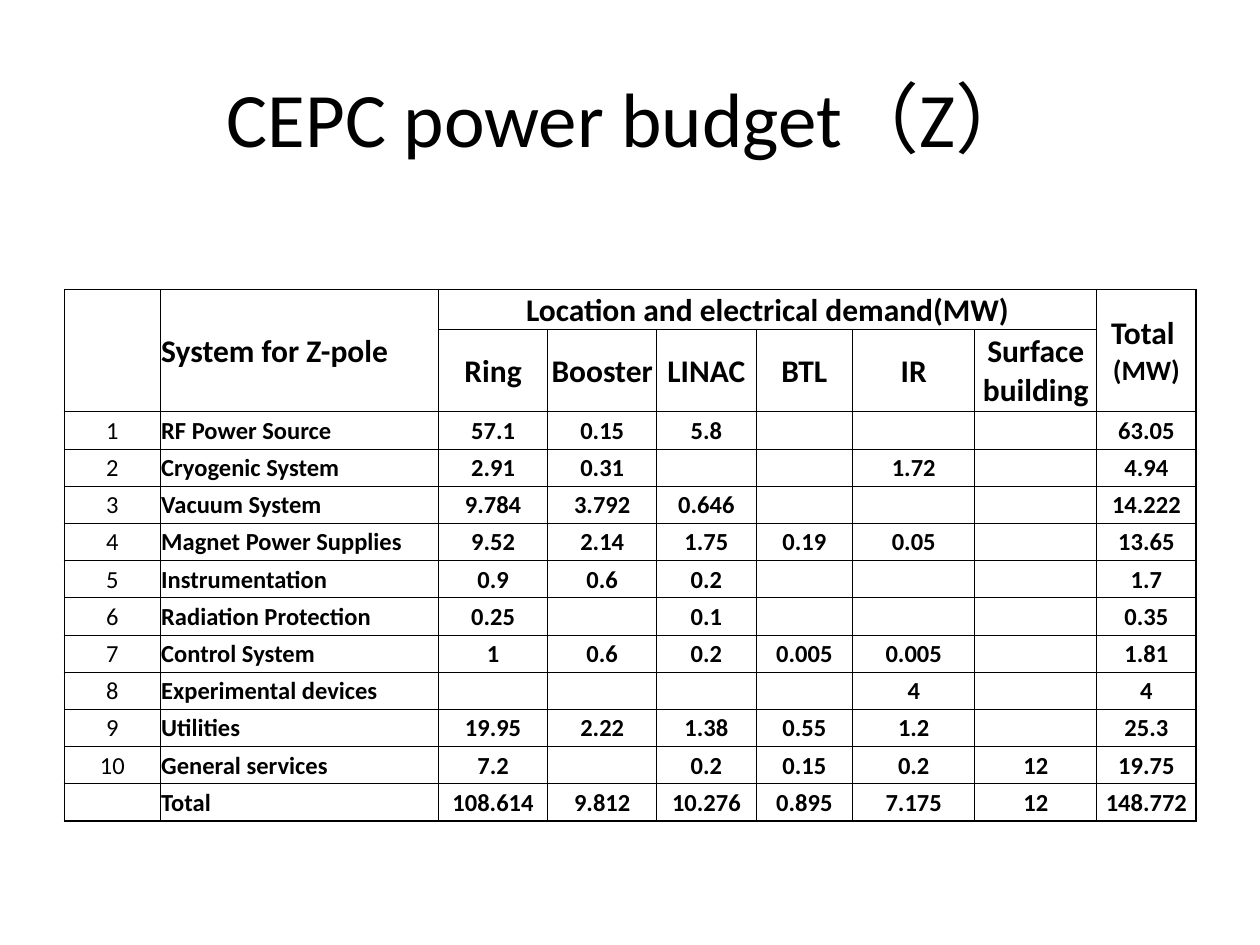
from lxml.etree import SubElement
from pptx import Presentation
from pptx.dml.color import RGBColor
from pptx.enum.text import MSO_ANCHOR, PP_ALIGN
from pptx.oxml.ns import qn
from pptx.util import Cm, Pt

COLORS = {"ink": "000000", "paper": "FFFFFF"}
FONT = "Calibri"

TITLE = "CEPC power budget（Z）"
HEADERS = [
    ["", "System for Z-pole", "Location and electrical demand(MW)", "", "", "", "", "",
     [("Total  ", 18), ("(MW)", 16)]],
    ["", "", "Ring", "Booster", "LINAC", "BTL", "IR", "Surface building", ""],
]
SYSTEMS = [
    ["1", "RF Power Source", "57.1", "0.15", "5.8", "", "", "", "63.05"],
    ["2", "Cryogenic System", "2.91", "0.31", "", "", "1.72", "", "4.94"],
    ["3", "Vacuum System", "9.784", "3.792", "0.646", "", "", "", "14.222"],
    ["4", "Magnet Power Supplies", "9.52", "2.14", "1.75", "0.19", "0.05", "", "13.65"],
    ["5", "Instrumentation", "0.9", "0.6", "0.2", "", "", "", "1.7"],
    ["6", "Radiation Protection", "0.25", "", "0.1", "", "", "", "0.35"],
    ["7", "Control System", "1", "0.6", "0.2", "0.005", "0.005", "", "1.81"],
    ["8", "Experimental devices", "", "", "", "", "4", "", "4"],
    ["9", "Utilities", "19.95", "2.22", "1.38", "0.55", "1.2", "", "25.3"],
    ["10", "General services", "7.2", "", "0.2", "0.15", "0.2", "12", "19.75"],
    ["", "Total", "108.614", "9.812", "10.276", "0.895", "7.175", "12", "148.772"],
]
ROWS = HEADERS + SYSTEMS
COLUMN_WIDTHS = [1.93, 5.61, 2.2, 2.2, 2, 1.95, 2.46, 2.46, 2]
ROW_HEIGHTS = [0.81, 1.65] + [0.75] * len(SYSTEMS)
MERGES = [((0, 0), (1, 0)), ((0, 1), (1, 1)), ((0, 2), (0, 7)), ((0, 8), (1, 8))]
NUMBER_COLUMN, NAME_COLUMN = 0, 1


def write_text(text_frame, text, *, size, bold=False, align=PP_ALIGN.CENTER):
    """Write a string, or a list of (string, size) runs, as one paragraph."""
    paragraph = text_frame.paragraphs[0]
    paragraph.alignment = align
    if not text:
        # An empty cell takes its line height from the end-of-paragraph size.
        SubElement(paragraph._p, qn("a:endParaRPr"), sz=str(size * 100))
        return
    runs = [(text, size)] if isinstance(text, str) else text
    for run_text, run_size in runs:
        run = paragraph.add_run()
        run.text = run_text
        run.font.name = FONT
        run.font.size = Pt(run_size)
        run.font.bold = bold
        run.font.color.rgb = RGBColor.from_string(COLORS["ink"])


def draw_borders(cell, widths):
    properties = cell._tc.get_or_add_tcPr()
    for side, width in widths.items():
        line = SubElement(properties, qn(f"a:ln{side}"), w=str(Pt(width)))
        fill = SubElement(line, qn("a:solidFill"))
        SubElement(fill, qn("a:srgbClr"), val=COLORS["ink"])


def add_budget_table(slide):
    frame = slide.shapes.add_table(len(ROWS), len(COLUMN_WIDTHS), Cm(1.3), Cm(5.84),
                                   Cm(sum(COLUMN_WIDTHS)), Cm(sum(ROW_HEIGHTS)))
    table = frame.table
    table.first_row = table.horz_banding = False
    for column, width in zip(table.columns, COLUMN_WIDTHS):
        column.width = Cm(width)
    for row, height in zip(table.rows, ROW_HEIGHTS):
        row.height = Cm(height)
    for start, end in MERGES:
        table.cell(*start).merge(table.cell(*end))

    last_row, last_column = len(ROWS) - 1, len(COLUMN_WIDTHS) - 1
    for r, values in enumerate(ROWS):
        for c, value in enumerate(values):
            cell = table.cell(r, c)
            cell.vertical_anchor = MSO_ANCHOR.MIDDLE
            cell.margin_left = cell.margin_top = cell.margin_right = Cm(0.02)
            cell.margin_bottom = 0
            outer = {"L": c == 0, "R": c == last_column, "T": r == 0, "B": r == last_row}
            draw_borders(cell, {side: 1 if edge else 0.5 for side, edge in outer.items()})
            cell.fill.solid()
            cell.fill.fore_color.rgb = RGBColor.from_string(COLORS["paper"])
            write_text(cell.text_frame, value,
                       size=18 if r < len(HEADERS) and value else 14,
                       bold=c != NUMBER_COLUMN,
                       align=PP_ALIGN.LEFT if c == NAME_COLUMN else PP_ALIGN.CENTER)


def main():
    presentation = Presentation()
    presentation.slide_width, presentation.slide_height = Cm(25.4), Cm(19.05)
    slide = presentation.slides.add_slide(presentation.slide_layouts[5])
    title = slide.shapes.title
    title.left, title.top, title.width, title.height = Cm(1.27), Cm(0.76), Cm(22.86), Cm(3.18)
    title.text_frame.vertical_anchor = MSO_ANCHOR.MIDDLE
    write_text(title.text_frame, TITLE, size=44)
    add_budget_table(slide)
    presentation.save("out.pptx")


if __name__ == "__main__":
    main()
